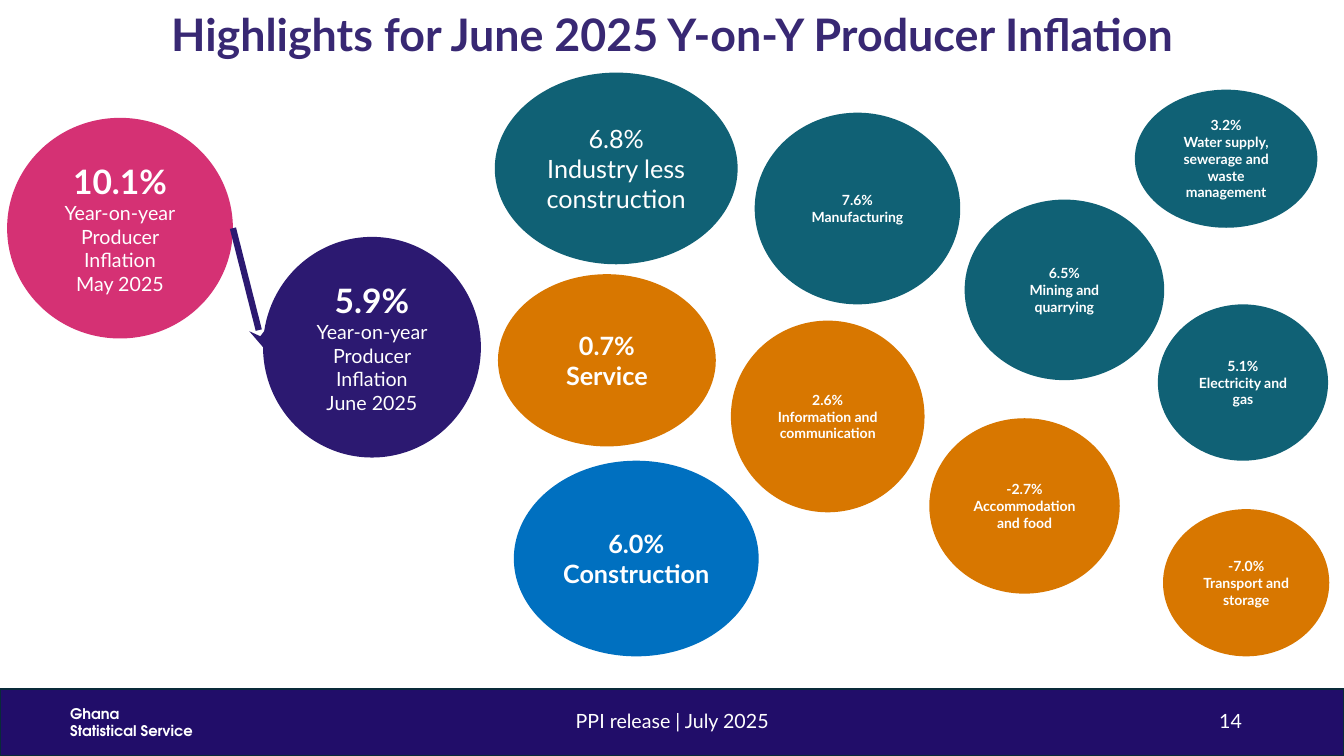
"""Slide with the June 2025 year-on-year producer inflation highlights."""
from dataclasses import dataclass

from lxml.etree import SubElement
from pptx import Presentation
from pptx.dml.color import RGBColor
from pptx.enum.shapes import MSO_CONNECTOR, MSO_SHAPE
from pptx.enum.text import MSO_ANCHOR, PP_ALIGN
from pptx.oxml.ns import qn
from pptx.util import Cm, Pt

WHITE, TITLE_PURPLE, BAR_PURPLE, BAR_EDGE = "FFFFFF", "382873", "210D69", "092A39"
PINK, PURPLE, TEAL, ORANGE, BLUE = "D53174", "2C1971", "106175", "D87700", "0070C0"


@dataclass(frozen=True)
class Box:
    """Position and size in centimetres."""
    left: float
    top: float
    width: float
    height: float

    def lengths(self) -> tuple:
        """Return the four lengths as slide units."""
        return Cm(self.left), Cm(self.top), Cm(self.width), Cm(self.height)


@dataclass(frozen=True)
class Line:
    """One paragraph of text and its look."""
    text: str
    size: float
    bold: bool = False
    color: str = WHITE
    font: str = "Lato"


@dataclass(frozen=True)
class Bubble:
    """A coloured ellipse holding a rate and its label."""
    box: Box
    color: str
    lines: list[Line]


@dataclass(frozen=True)
class Caption:
    """A text box on the footer bar."""
    box: Box
    lines: list[Line]
    align: PP_ALIGN
    anchor: MSO_ANCHOR = MSO_ANCHOR.MIDDLE


def rgb(code: str) -> RGBColor:
    """Turn a hex string into a colour."""
    return RGBColor.from_string(code)


def headline(rate: str, *details: str) -> list[Line]:
    """Return a large bold rate above plain details."""
    return [Line(rate, 24, True), *(Line(detail, 14) for detail in details)]


def sector(rate: str, label: str, size: float = 10, bold: bool = True) -> list[Line]:
    """Return a rate and a label of one size."""
    return [Line(rate, size, bold), Line(label, size, bold)]


MAY = Bubble(Box(0.18, 2.97, 5.69, 5.56), PINK,
             headline("10.1%", "Year-on-year", "Producer Inflation", "May 2025"))
JUNE = Bubble(Box(6.63, 5.97, 5.49, 5.56), PURPLE,
              headline("5.9%", "Year-on-year Producer Inflation", "June 2025"))
SECTORS = [
    Bubble(Box(12.47, 1.83, 6.12, 4.83), TEAL,
           sector("6.8%", "Industry less construction", 18, False)),
    Bubble(Box(12.55, 6.91, 5.49, 4.34), ORANGE, sector("0.7%", "Service", 18)),
    Bubble(Box(24.31, 5.03, 5.03, 4.55), TEAL, sector("6.5%", "Mining and quarrying")),
    Bubble(Box(19.02, 2.84, 5.18, 4.83), TEAL, sector("7.6%", "Manufacturing")),
    Bubble(Box(29.18, 7.67, 4.29, 3.94), TEAL, sector("5.1%", "Electricity and gas")),
    Bubble(Box(28.6, 2.26, 4.6, 3.48), TEAL,
           sector("3.2%", "Water supply, sewerage and waste management")),
    Bubble(Box(12.95, 11.61, 6.17, 4.93), BLUE, sector("6.0%", "Construction", 18)),
    Bubble(Box(29.31, 12.83, 4.19, 3.71), ORANGE, sector("-7.0%", "Transport and storage")),
    Bubble(Box(23.42, 10.54, 4.8, 4.42), ORANGE, sector("-2.7%", "Accommodation and food")),
    Bubble(Box(18.42, 8.08, 4.88, 4.83), ORANGE,
           sector("2.6%", "Information and communication")),
]
CAPTIONS = [
    Caption(Box(1.52, 17.63, 5.69, 1.19),
            [Line(text, 10.5, True, font="TeX Gyre Adventor")
             for text in ("Ghana", "Statistical Service")],
            PP_ALIGN.LEFT, MSO_ANCHOR.TOP),
    Caption(Box(11.23, 17.65, 11.43, 1.02), [Line("PPI release | July 2025", 14)],
            PP_ALIGN.CENTER),
    Caption(Box(23.93, 17.65, 7.62, 1.02), [Line("14", 14)], PP_ALIGN.RIGHT),
]


def write(shape, lines: list[Line], align: PP_ALIGN, anchor: MSO_ANCHOR) -> None:
    """Fill a shape with one run per paragraph."""
    frame = shape.text_frame
    frame.word_wrap = True
    frame.vertical_anchor = anchor
    for index, line in enumerate(lines):
        paragraph = frame.add_paragraph() if index else frame.paragraphs[0]
        paragraph.alignment = align
        run = paragraph.add_run()
        run.text = line.text
        run.font.name = line.font
        run.font.size = Pt(line.size)
        run.font.bold = line.bold
        run.font.color.rgb = rgb(line.color)


def add_title(slide) -> None:
    """Place and format the title placeholder."""
    title = slide.shapes.title
    title.left, title.top, title.width, title.height = Box(2.34, 0.05, 29.21, 1.78).lengths()
    heading = Line("Highlights for June 2025 Y-on-Y Producer Inflation", 32, True, TITLE_PURPLE)
    write(title, [heading], PP_ALIGN.CENTER, MSO_ANCHOR.MIDDLE)
    title.text_frame.paragraphs[0].line_spacing = 0.9


def add_filled(slide, kind: MSO_SHAPE, box: Box, color: str):
    """Add a flat filled shape without an outline."""
    shape = slide.shapes.add_shape(kind, *box.lengths())
    shape.shadow.inherit = False
    shape.fill.solid()
    shape.fill.fore_color.rgb = rgb(color)
    shape.line.fill.background()
    return shape


def add_bubble(slide, bubble: Bubble) -> None:
    """Add one ellipse with its text."""
    ellipse = add_filled(slide, MSO_SHAPE.OVAL, bubble.box, bubble.color)
    write(ellipse, bubble.lines, PP_ALIGN.CENTER, MSO_ANCHOR.MIDDLE)


def add_arrow(slide, start: Box, end: Box) -> None:
    """Draw an arrow from the right of one box to the left of another."""
    arrow = slide.shapes.add_connector(
        MSO_CONNECTOR.STRAIGHT,
        Cm(start.left + start.width), Cm(start.top + start.height / 2),
        Cm(end.left), Cm(end.top + end.height / 2))
    arrow.line.color.rgb = rgb(PURPLE)
    arrow.line.width = Pt(4.5)
    SubElement(arrow.line._get_or_add_ln(), qn("a:tailEnd"), type="stealth")
    SubElement(arrow._element.spPr, qn("a:effectLst"))


def add_footer(slide) -> None:
    """Add the footer bar and its captions."""
    bar = add_filled(slide, MSO_SHAPE.RECTANGLE, Box(0, 17.37, 33.87, 1.68), BAR_PURPLE)
    bar.line.color.rgb = rgb(BAR_EDGE)
    bar.line.width = Pt(1.5)
    for caption in CAPTIONS:
        textbox = slide.shapes.add_textbox(*caption.box.lengths())
        write(textbox, caption.lines, caption.align, caption.anchor)


def main() -> None:
    """Build and save the slide."""
    deck = Presentation()
    deck.slide_width, deck.slide_height = Cm(33.87), Cm(19.05)
    slide = deck.slides.add_slide(deck.slide_layouts[5])
    add_title(slide)
    add_footer(slide)
    for bubble in (MAY, JUNE):
        add_bubble(slide, bubble)
    add_arrow(slide, MAY.box, JUNE.box)
    for bubble in SECTORS:
        add_bubble(slide, bubble)
    deck.save("out.pptx")


if __name__ == "__main__":
    main()
